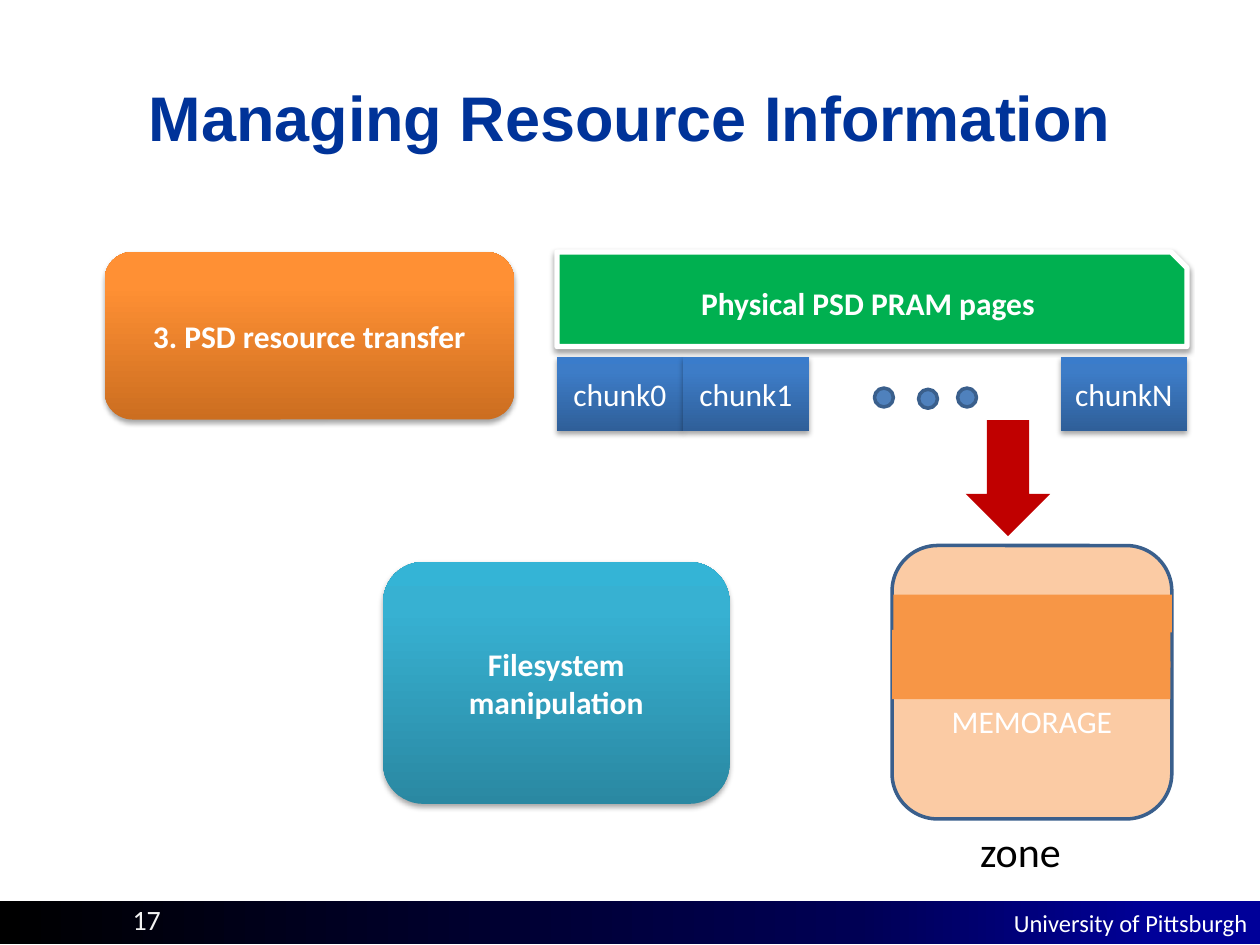
from lxml import etree
from pptx import Presentation
from pptx.dml.color import RGBColor
from pptx.enum.shapes import MSO_SHAPE as Shape
from pptx.enum.text import MSO_ANCHOR as Anchor, PP_ALIGN as Align
from pptx.oxml.ns import qn
from pptx.util import Inches, Pt

COLORS = {
    "white": "FFFFFF", "black": "000000", "title": "003399", "number": "F2F2F2",
    "green": "00B050", "red": "C00000", "orange": "F79646",
    "blue": "4F81BD", "outline": "3A5F8C",
}
# Gradient stops as (percent, colour)
GRADIENTS = {
    "footer": [(0, "000000"), (68, "000054"), (92, "000099")],
    "transfer": [(0, "CC6E20"), (80, "FF9034"), (100, "FF9136")],
    "chunk": [(0, "2F5F99"), (80, "3D7CC7"), (100, "3A7CCB")],
    "filesystem": [(0, "2A88A2"), (80, "37B1D2"), (100, "34B4D6")],
}
STEPS = [
    ("3. PSD resource transfer", "transfer", (0.83, 2, 3.25, 1.33)),
    ("Filesystem\nmanipulation", "filesystem", (3.04, 4.46, 2.75, 1.92)),
]
PAGES_LEFT, CHUNK_TOP, CHUNK_WIDTH = 4.42, 2.83, 1
CHUNKS = [("chunk0", 0), ("chunkN", 4), ("chunk1", 1)]  # label, column
DOTS = [(6.94, 3.08), (7.29, 3.09), (7.6, 3.08)]
ZONE_BANDS = [(7.09, 4.72), (7.08, 5), (7.08, 5.25)]


def rgb(name):
    return RGBColor.from_string(COLORS[name])


def add_child(parent, tag, **attributes):
    child = etree.SubElement(parent, qn(tag))
    for key, value in attributes.items():
        child.set(key, str(value))
    return child


def add_color(parent, color, opacity=100):
    node = add_child(parent, "a:srgbClr", val=color)
    if opacity < 100:
        add_child(node, "a:alpha", val=opacity * 1000)


def write(box, text, size=18, color="white", bold=False, font="Calibri",
          align=Align.CENTER, anchor=Anchor.MIDDLE, margin_top=0.05):
    frame = box.text_frame
    frame.word_wrap = True
    frame.vertical_anchor = anchor
    frame.margin_top = Inches(margin_top)
    for index, line in enumerate(text.split("\n")):
        para = frame.add_paragraph() if index else frame.paragraphs[0]
        para.alignment = align
        span = para.add_run()
        span.text = line
        span.font.size = Pt(size)
        span.font.name = font
        span.font.bold = bold
        span.font.color.rgb = rgb(color)


def add_text(place, text, **style):
    write(page.shapes.add_textbox(*map(Inches, place)), text, **style)


def add_box(kind, place, fill=None, gradient=None, angle=90, line=None,
            line_width=2, opacity=100, shadow=None):
    """Add a shape; shadow is (opacity percent, blur, distance) in points."""
    box = page.shapes.add_shape(kind, *map(Inches, place))
    box.shadow.inherit = False
    properties = box.fill._xPr
    if gradient:
        box.fill.gradient()
        box.fill.gradient_angle = angle
        stops = properties.find(".//" + qn("a:gsLst"))
        for stop in list(stops):
            stops.remove(stop)
        for percent, color in GRADIENTS[gradient]:
            add_color(add_child(stops, "a:gs", pos=percent * 1000), color)
    else:
        box.fill.solid()
        box.fill.fore_color.rgb = rgb(fill)
        if opacity < 100:
            color = properties.find(qn("a:solidFill"))[0]
            add_child(color, "a:alpha", val=opacity * 1000)
    if line:
        box.line.color.rgb = rgb(line)
        box.line.width = Pt(line_width)
    else:
        box.line.fill.background()
    if shadow:
        strength, blur, distance = shadow
        outer = add_child(properties.find(qn("a:effectLst")), "a:outerShdw",
                          blurRad=Pt(blur), dist=Pt(distance), dir=90 * 60000,
                          rotWithShape=0)
        add_color(outer, COLORS["black"], strength)
    return box


deck = Presentation()
deck.slide_width, deck.slide_height = Inches(10), Inches(7.5)
page = deck.slides.add_slide(deck.slide_layouts[6])
SOFT = (35, 3.1, 1.8)

footer = add_box(Shape.RECTANGLE, (0, 7.15, 10, 0.34), gradient="footer", angle=0)
write(footer, "University of Pittsburgh", size=14, align=Align.RIGHT)
add_text((0.5, 0.3, 9, 1.25), "Managing Resource Information", size=36,
         color="title", bold=True, font="Arial")
add_text((0, 7.1, 2.33, 0.4), "17", size=16, color="number")

for label, gradient, place in STEPS:
    step = add_box(Shape.ROUNDED_RECTANGLE, place, gradient=gradient, shadow=SOFT)
    write(step, label, bold=True)

pages = add_box(Shape.SNIP_1_RECTANGLE, (PAGES_LEFT, 2, 5 * CHUNK_WIDTH, 0.75),
                fill="green", line="white", line_width=3, shadow=(38, 3.1, 1.6))
write(pages, "Physical PSD PRAM pages", bold=True)
for label, column in CHUNKS:
    left = PAGES_LEFT + column * CHUNK_WIDTH
    chunk = add_box(Shape.RECTANGLE, (left, CHUNK_TOP, CHUNK_WIDTH, 0.59),
                    gradient="chunk", shadow=SOFT)
    write(chunk, label)
for left, top in DOTS:
    add_box(Shape.FLOWCHART_CONNECTOR, (left, top, 0.15, 0.15),
            fill="blue", line="outline")

zone = add_box(Shape.ROUNDED_RECTANGLE, (7.08, 4.33, 2.22, 2.17),
               fill="orange", opacity=49, line="outline")
write(zone, "MEMORAGE", margin_top=0.66)
add_text((7.68, 6.5, 1.1, 0.5), "zone", size=24, color="black",
         align=Align.LEFT, anchor=Anchor.TOP)
arrow = add_box(Shape.LEFT_ARROW, (7.54, 3.46, 0.92, 0.67), fill="red")
arrow.rotation = 270
for left, top in ZONE_BANDS:
    add_box(Shape.RECTANGLE, (left, top, 2.21, 0.3), fill="orange")

deck.save("out.pptx")
